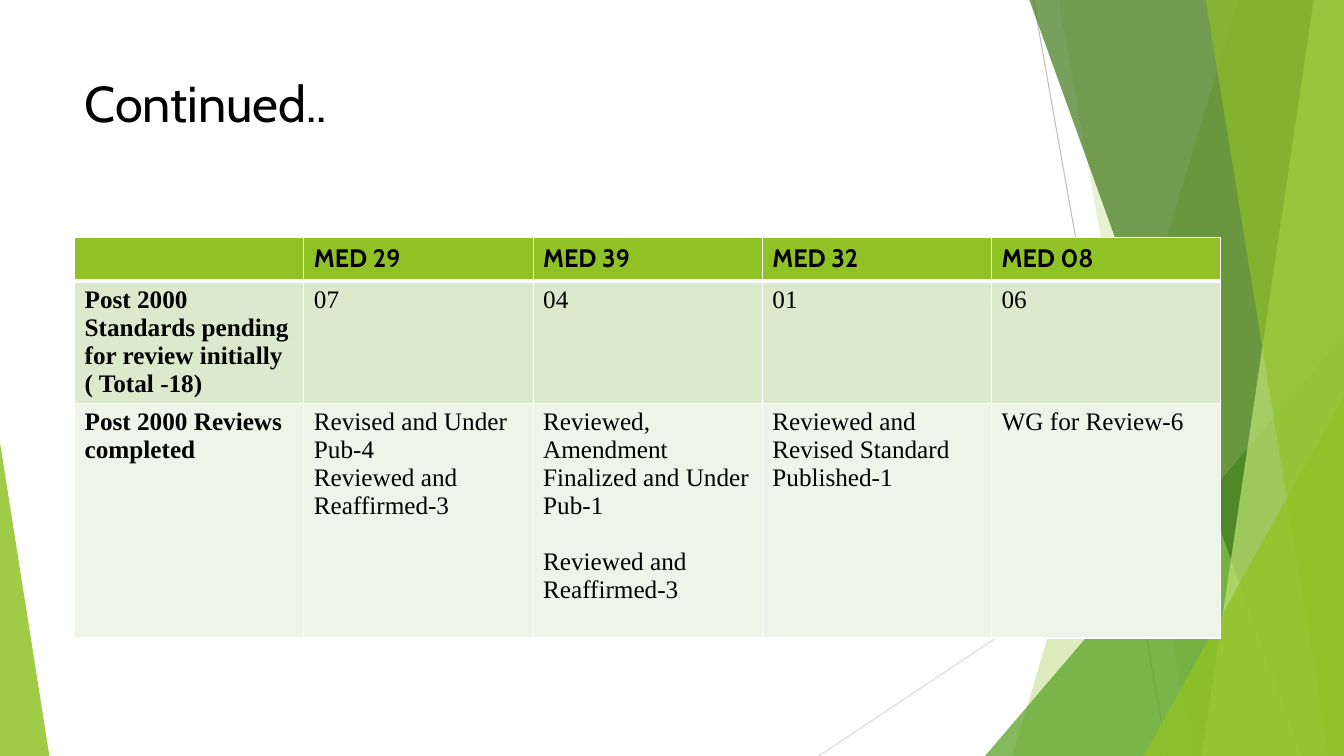
"""Build the "Continued.." slide with a table of standards reviews and green facets."""
from lxml.etree import SubElement
from pptx import Presentation
from pptx.dml.color import RGBColor
from pptx.enum.shapes import MSO_CONNECTOR, MSO_SHAPE
from pptx.enum.text import MSO_ANCHOR, PP_ALIGN
from pptx.oxml.ns import qn
from pptx.util import Inches, Pt

GREEN = "90C226"
WIDTH, HEIGHT = 13.33, 7.5


def paint(target, color, opacity=100):
    """Give a fill one solid colour and opacity in percent."""
    target.solid()
    target.fore_color.rgb = RGBColor.from_string(color)
    if opacity < 100:
        color_element = target._xPr.find(f".//{qn('a:srgbClr')}")
        SubElement(color_element, qn("a:alpha"), val=str(opacity * 1000))


def format_font(font, values):
    """Set font attributes and colour from a dict."""
    for name, value in values.items():
        setattr(font, name, value)
    paint(font.fill, "000000")


presentation = Presentation()
presentation.slide_width = Inches(WIDTH)
presentation.slide_height = Inches(HEIGHT)
slide = presentation.slides.add_slide(presentation.slide_layouts[5])

guide_lines = [(10.25, 0, 11.58, 7.5, "BFBFBF"), (13.33, 4.03, 8.12, 7.5, "D9D9D9")]
for *ends, color in guide_lines:
    line = slide.shapes.add_connector(MSO_CONNECTOR.STRAIGHT, *map(Inches, ends))
    line.line.width = Pt(0.75)
    paint(line.line.fill, color)
    SubElement(line._element.spPr, qn("a:effectLst"))

# top-left x, bottom-left x for bands; left, top, width, height, apex for triangles
facets = [
    ("band", (12.28, 10.04), GREEN, 30),
    ("band", (10.5, 11.83), GREEN, 20),
    ("triangle", (9.77, 3.33, 3.56, 4.17, 1), "54A021", 72),
    ("band", (10.21, 12.91), "3F7819", 70),
    ("band", (13.03, 11.92), "C0E474", 70),
    ("band", (11.96, 13.18), GREEN, 65),
    ("triangle", (11.34, 3.93, 1.99, 3.57, 1), GREEN, 80),
    ("triangle", (0, 4.39, 0.49, 3.11, 0), GREEN, 85),
]
for kind, geometry, color, opacity in facets:
    if kind == "band":
        top_left, bottom_left = geometry
        builder = slide.shapes.build_freeform(Inches(top_left), 0)
        corners = [(WIDTH, 0), (WIDTH, HEIGHT), (bottom_left, HEIGHT)]
        builder.add_line_segments([(Inches(x), Inches(y)) for x, y in corners])
        shape = builder.convert_to_shape()
    else:
        *box, apex = geometry
        shape = slide.shapes.add_shape(MSO_SHAPE.ISOSCELES_TRIANGLE, *map(Inches, box))
        shape.adjustments[0] = apex
    shape.shadow.inherit = False
    shape.line.fill.background()
    paint(shape.fill, color, opacity)

title = slide.shapes.title
title_box = {"left": 0.74, "top": 0.67, "width": 9.4, "height": 1.44}
for name, value in title_box.items():
    setattr(title, name, Inches(value))
title.text_frame.text = "Continued.."
title.text_frame.vertical_anchor = MSO_ANCHOR.TOP
title.text_frame.paragraphs[0].alignment = PP_ALIGN.LEFT
format_font(title.text_frame.paragraphs[0].runs[0].font, {"name": "Cabin", "size": Pt(36)})

rows = [
    ["", "MED 29", "MED 39", "MED 32", "MED 08"],
    ["Post 2000 Standards pending for review initially ( Total -18)", "07", "04", "01", "06"],
    [
        "Post 2000 Reviews completed",
        "Revised and Under Pub-4\nReviewed and Reaffirmed-3",
        "Reviewed, Amendment Finalized and Under Pub-1\nReviewed and Reaffirmed-3",
        "Reviewed and Revised Standard Published-1",
        "WG for Review-6",
    ],
]
row_heights = [0.43, 1.21, 2.33]
row_fills = [GREEN, "DBE9CD", "EEF4E8"]
frame = slide.shapes.add_table(
    3, 5, Inches(0.74), Inches(2.36), Inches(11.37), Inches(sum(row_heights))
)
table = frame.table
for row_index, texts in enumerate(rows):
    table.rows[row_index].height = Inches(row_heights[row_index])
    for column_index, text in enumerate(texts):
        cell = table.cell(row_index, column_index)
        cell.text = text
        borders = {"lnL": 1, "lnR": 1, "lnT": 1, "lnB": 1}
        if row_index == 0:
            borders["lnB"] = 3
        elif row_index == 1:
            borders["lnT"] = 3
        properties = cell._tc.get_or_add_tcPr()
        for side, width in borders.items():
            border = SubElement(properties, qn(f"a:{side}"), w=str(Pt(width)))
            border_fill = SubElement(border, qn("a:solidFill"))
            SubElement(border_fill, qn("a:srgbClr"), val="FFFFFF")
        paint(cell.fill, row_fills[row_index])
        values = {
            "name": "Times New Roman" if row_index else "Cabin",
            "size": Pt(18),
            "bold": row_index == 0 or column_index == 0,
        }
        for paragraph in cell.text_frame.paragraphs:
            format_font(paragraph.font, values)
            for run in paragraph.runs:
                format_font(run.font, values)

table.cell(2, 2).text_frame.paragraphs[1].space_before = Pt(20)

presentation.save("out.pptx")
